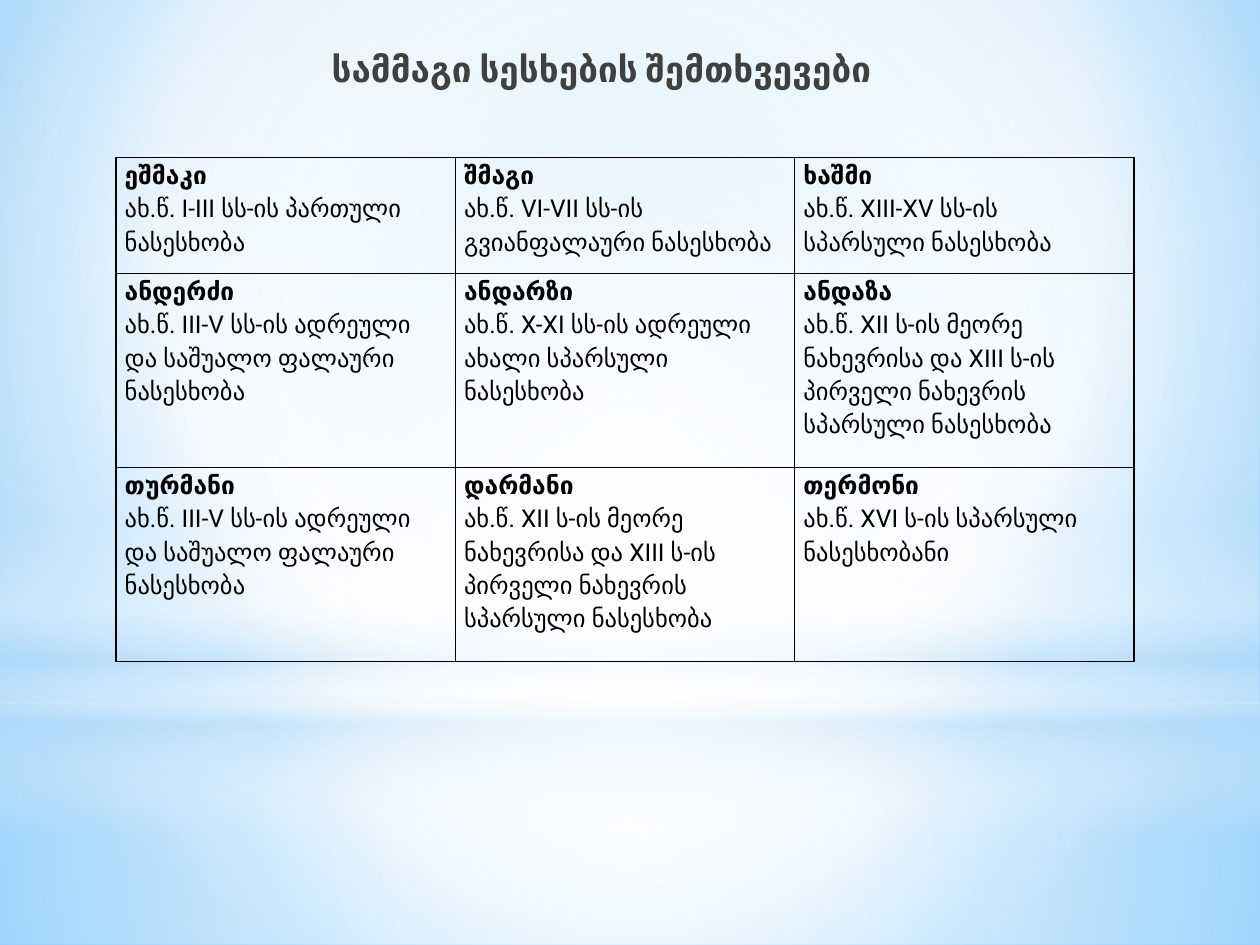
from lxml.etree import SubElement
from pptx import Presentation
from pptx.dml.color import RGBColor
from pptx.enum.shapes import MSO_SHAPE
from pptx.enum.text import MSO_ANCHOR, MSO_AUTO_SIZE, PP_ALIGN
from pptx.oxml import parse_xml
from pptx.oxml.ns import nsdecls, qn
from pptx.util import Inches, Pt

WHITE = RGBColor(0xFF, 0xFF, 0xFF)
BLACK = RGBColor(0x00, 0x00, 0x00)
HEADING_GRAY = RGBColor(0x40, 0x40, 0x40)
PALE_BLUE = RGBColor(0xB4, 0xDC, 0xFA)
SKY_BLUE = RGBColor(0x9E, 0xD5, 0xFF)
DEEP_BLUE = RGBColor(0x5B, 0xB9, 0xFF)

HEADING = "სამმაგი სესხების შემთხვევები"
EARLY_MIDDLE_PAHLAVI = "ახ.წ. III-V სს-ის ადრეული და საშუალო ფალაური ნასესხობა"
PERSIAN_XII_XIII = ("ახ.წ. XII ს-ის მეორე ნახევრისა და XIII ს-ის "
                    "პირველი ნახევრის სპარსული ნასესხობა")
LOANWORDS = [
    [("ეშმაკი", "ახ.წ. I-III სს-ის პართული ნასესხობა"),
     ("შმაგი", "ახ.წ. VI-VII სს-ის გვიანფალაური ნასესხობა"),
     ("ხაშმი", "ახ.წ. XIII-XV სს-ის სპარსული ნასესხობა")],
    [("ანდერძი", EARLY_MIDDLE_PAHLAVI),
     ("ანდარზი", "ახ.წ. X-XI სს-ის ადრეული ახალი სპარსული ნასესხობა"),
     ("ანდაზა", PERSIAN_XII_XIII)],
    [("თურმანი", EARLY_MIDDLE_PAHLAVI),
     ("დარმანი", PERSIAN_XII_XIII),
     ("თერმონი", "ახ.წ. XVI ს-ის სპარსული ნასესხობანი")],
]
ROW_HEIGHTS = [Inches(0.92), Inches(1.54), Inches(1.54)]

# Stops are (position %, colour, opacity %)
BACKDROP_STOPS = [(0, SKY_BLUE, 100), (60, WHITE, 100), (100, DEEP_BLUE, 100)]
FLOOR_STOPS = [(0, WHITE, 91), (37, WHITE, 76), (100, PALE_BLUE, 79)]
WALL_STOPS = [(0, WHITE, 89), (48, WHITE, 62), (100, PALE_BLUE, 79)]
HORIZON_STOPS = [(0, WHITE, 0), (29, WHITE, 30), (45, PALE_BLUE, 40),
                 (55, WHITE, 26), (65, PALE_BLUE, 60), (100, WHITE, 0)]
GLOW_STOPS = [(0, WHITE, 100), (56, WHITE, 0)]
CENTRE = (50, 50, 50, 50)


def apply_gradient(fill, properties, stops, focus=None):
    """Circular gradient around focus, or a vertical one without it."""
    fill.solid()
    gradient = parse_xml(f'<a:gradFill {nsdecls("a")} rotWithShape="1"/>')
    stop_list = SubElement(gradient, qn("a:gsLst"))
    for position, color, opacity in stops:
        stop = SubElement(stop_list, qn("a:gs"), pos=str(position * 1000))
        srgb = SubElement(stop, qn("a:srgbClr"), val=str(color))
        if opacity < 100:
            SubElement(srgb, qn("a:alpha"), val=str(opacity * 1000))
    if focus:
        circle = SubElement(gradient, qn("a:path"), path="circle")
        sides = {side: str(share * 1000) for side, share in zip("ltrb", focus)}
        SubElement(circle, qn("a:fillToRect"), **sides)
    else:
        SubElement(gradient, qn("a:lin"), ang="5400000", scaled="0")
    properties.replace(properties.find(qn("a:solidFill")), gradient)


def add_backdrop(slide, width):
    backdrop_fill = slide.background.fill
    backdrop_fill.solid()
    properties = slide.element.find(f'.//{qn("p:bgPr")}')
    apply_gradient(backdrop_fill, properties, BACKDROP_STOPS, (20, 10, 20, 60))
    # Floor, wall, horizon and glow, from back to front
    for preset, top, height, stops, focus in [
        (MSO_SHAPE.RECTANGLE, 5.58, 1.92, FLOOR_STOPS, CENTRE),
        (MSO_SHAPE.RECTANGLE, 0, 5.58, WALL_STOPS, CENTRE),
        (MSO_SHAPE.RECTANGLE, 4.12, 2.5, HORIZON_STOPS, None),
        (MSO_SHAPE.OVAL, 1.75, 5.58, GLOW_STOPS, CENTRE),
    ]:
        layer = slide.shapes.add_shape(preset, 0, Inches(top), width, Inches(height))
        layer.shadow.inherit = False
        layer.line.fill.background()
        apply_gradient(layer.fill, layer.element.spPr, stops, focus)


def format_text(paragraph, font_name, size, color, bold):
    font = paragraph.runs[0].font
    font.name, font.size, font.bold = font_name, size, bold
    font.color.rgb = color


def add_heading(slide, left, top, width, height):
    heading = slide.shapes.title
    heading.left, heading.top, heading.width, heading.height = left, top, width, height
    # Bring the heading in front of the backdrop
    heading.element.getparent().append(heading.element)
    frame = heading.text_frame
    frame.text = HEADING
    frame.word_wrap = True
    frame.auto_size = MSO_AUTO_SIZE.NONE
    frame.vertical_anchor = MSO_ANCHOR.TOP
    frame.margin_left = Inches(0.15)
    paragraph = frame.paragraphs[0]
    paragraph.alignment = PP_ALIGN.CENTER
    paragraph.space_after = Pt(3)
    format_text(paragraph, "Cabin", Pt(20), HEADING_GRAY, True)


def add_borders(cell):
    properties = cell._tc.get_or_add_tcPr()
    for index, side in enumerate(("lnL", "lnR", "lnT", "lnB")):
        border = parse_xml(
            f'<a:{side} {nsdecls("a")} w="{Pt(1)}"><a:solidFill>'
            f'<a:srgbClr val="{BLACK}"/></a:solidFill></a:{side}>')
        properties.insert(index, border)


def fill_cell(cell, word, origin):
    cell.fill.background()
    add_borders(cell)
    cell.margin_left = cell.margin_right = Inches(0.07)
    cell.margin_top = cell.margin_bottom = 0
    cell.vertical_anchor = MSO_ANCHOR.TOP
    cell.text_frame.text = f"{word}\n{origin}"
    for paragraph, bold in zip(cell.text_frame.paragraphs, (True, False)):
        paragraph.line_spacing = 1.15
        format_text(paragraph, "Roboto", Pt(14), BLACK, bold)


def add_loanword_table(slide, left, top, width, height):
    rows, columns = len(LOANWORDS), len(LOANWORDS[0])
    table = slide.shapes.add_table(rows, columns, left, top, width, height).table
    table.first_row = False
    table.horz_banding = False
    for row, row_height, entries in zip(table.rows, ROW_HEIGHTS, LOANWORDS):
        row.height = row_height
        for cell, (word, origin) in zip(row.cells, entries):
            fill_cell(cell, word, origin)


def main():
    presentation = Presentation()
    presentation.slide_width = Inches(10)
    presentation.slide_height = Inches(7.5)
    slide = presentation.slides.add_slide(presentation.slide_layouts[5])
    add_backdrop(slide, presentation.slide_width)
    add_heading(slide, Inches(1.25), Inches(0.33), Inches(7), Inches(0.58))
    add_loanword_table(slide, Inches(0.92), Inches(1.25), Inches(8.08), Inches(4))
    presentation.save("out.pptx")


if __name__ == "__main__":
    main()
